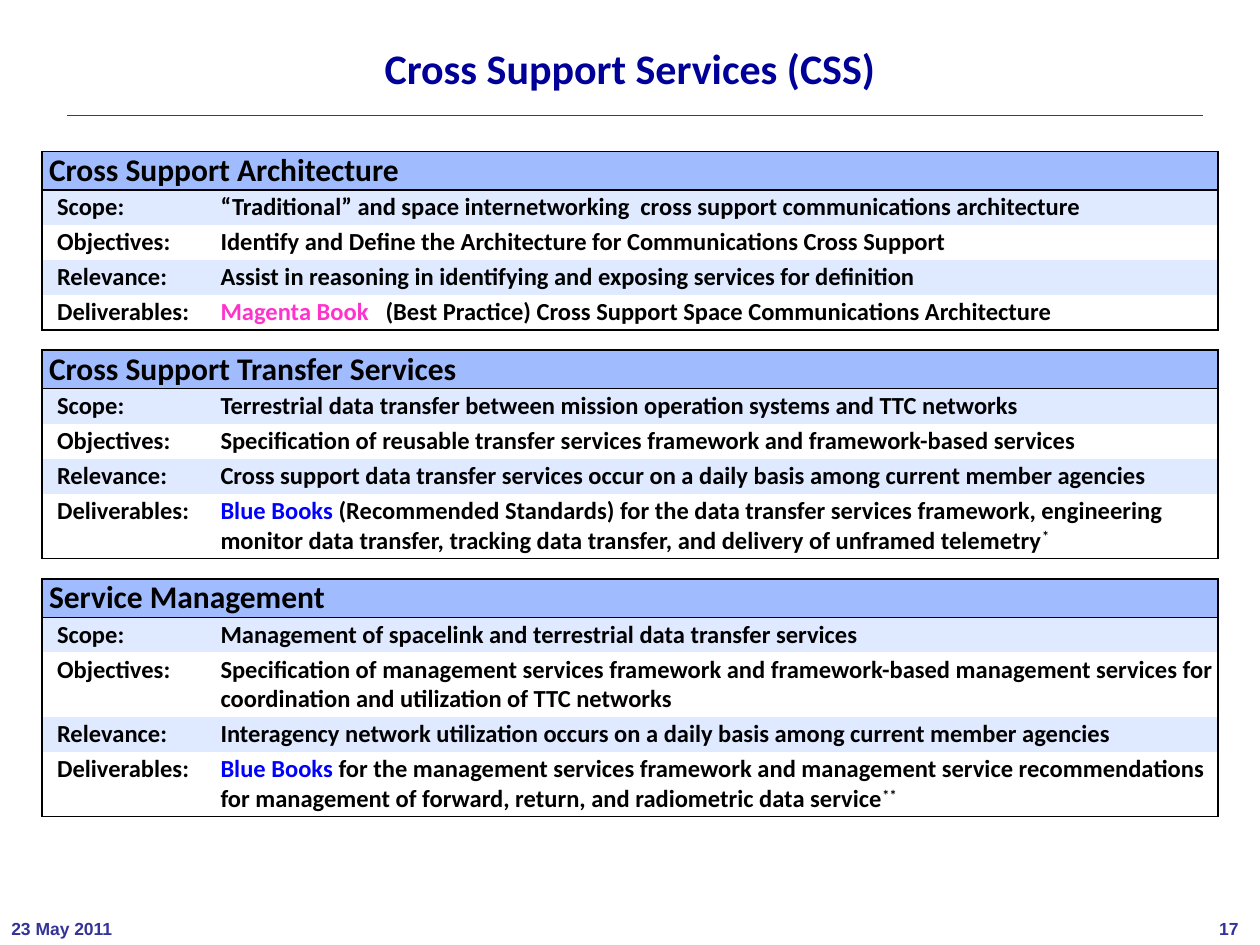
"""Build the Cross Support Services overview slide."""
from dataclasses import dataclass
from typing import Optional

from lxml.etree import SubElement
from pptx import Presentation
from pptx.dml.color import RGBColor
from pptx.enum.shapes import MSO_CONNECTOR as CONN
from pptx.enum.text import MSO_ANCHOR as ANCHOR, PP_ALIGN as ALIGN
from pptx.oxml.ns import qn
from pptx.util import Pt

BLACK = RGBColor(0x00, 0x00, 0x00)
NAVY = RGBColor(0x00, 0x00, 0x99)
INDIGO = RGBColor(0x33, 0x33, 0x99)
BLUE = RGBColor(0x00, 0x00, 0xFF)
MAGENTA = RGBColor(0xFF, 0x33, 0xCC)
HEADER_FILL = RGBColor(0xA0, 0xBC, 0xFE)
BAND_FILL = RGBColor(0xDF, 0xE9, 0xFF)

LABELS = ("Scope:", "Objectives:", "Relevance:", "Deliverables:")
COL_WIDTHS = (102, 570)
HEADER_H, LINE_H, TWO_LINE_H, SPACER_H = 22, 20, 37, 11.7


@dataclass(frozen=True)
class Span:
    text: str
    color: RGBColor = BLACK
    raised: bool = False


@dataclass(frozen=True)
class Entry:
    spans: tuple[Span, ...]
    height: float = LINE_H
    tab: Optional[float] = None


@dataclass(frozen=True)
class Area:
    title: str
    entries: tuple[Entry, ...]


@dataclass(frozen=True)
class Label:
    text: str
    box: tuple[float, float, float, float]
    size: float
    font: str
    color: RGBColor
    align: ALIGN = ALIGN.LEFT
    spacing: float = 1.0


def plain(text: str, height: float = LINE_H) -> Entry:
    return Entry((Span(text),), height)


AREAS = (
    Area("Cross Support Architecture", (
        plain("“Traditional” and space internetworking  cross support communications architecture"),
        plain("Identify and Define the Architecture for Communications Cross Support"),
        plain("Assist in reasoning in identifying and exposing services for definition"),
        Entry((Span("Magenta Book\t", MAGENTA),
               Span("(Best Practice) Cross Support Space Communications Architecture")), tab=94.3),
    )),
    Area("Cross Support Transfer Services", (
        plain("Terrestrial data transfer between mission operation systems and TTC networks"),
        plain("Specification of reusable transfer services framework and framework-based services"),
        plain("Cross support data transfer services occur on a daily basis among current member agencies"),
        Entry((Span("Blue Books ", BLUE),
               Span("(Recommended Standards) for the data transfer services framework, engineering "
                    "monitor data transfer, tracking data transfer, and delivery of unframed telemetry"),
               Span("*", raised=True)), TWO_LINE_H),
    )),
    Area("Service Management", (
        plain("Management of spacelink and terrestrial data transfer services"),
        plain("Specification of management services framework and framework-based management "
              "services for coordination and utilization of TTC networks", TWO_LINE_H),
        plain("Interagency network utilization occurs on a daily basis among current member agencies"),
        Entry((Span("Blue Books ", BLUE),
               Span("for the management services framework and management service recommendations "
                    "for management of forward, return, and radiometric data service"),
               Span("**", raised=True)), TWO_LINE_H),
    )),
)

TEXTS = (
    Label("Cross Support Services (CSS)", (36, 22.3, 648, 36), 24, "Calibri", NAVY, ALIGN.CENTER, 0.9),
    Label("23 May 2011", (6.5, 521.3, 72, 18.7), 10, "Arial", INDIGO),
    Label("17", (696.6, 521.3, 18.4, 18.7), 10, "Arial", INDIGO),
)


def add_run(p, span: Span, size: float, font: str = "Calibri") -> None:
    r = p.add_run()
    r.text = span.text
    r.font.size, r.font.name, r.font.bold = Pt(size), font, True
    r.font.color.rgb = span.color
    if span.raised:
        r.font._element.set("baseline", "30000")


def add_label(s, label: Label) -> None:
    tf = s.shapes.add_textbox(*map(Pt, label.box)).text_frame
    tf.word_wrap = True
    tf.margin_left = tf.margin_right = tf.margin_top = tf.margin_bottom = 0
    tf.vertical_anchor = ANCHOR.MIDDLE
    p = tf.paragraphs[0]
    p.alignment, p.line_spacing = label.align, label.spacing
    add_run(p, Span(label.text, label.color), label.size, label.font)


def add_rule(s) -> None:
    line = s.shapes.add_connector(CONN.STRAIGHT, Pt(38.2), Pt(66), Pt(687.6), Pt(66))
    line.line.color.rgb, line.line.width = INDIGO, Pt(0.13)
    SubElement(line._element.spPr, qn("a:effectLst"))


def style_cell(cell, sides: str, fill: Optional[RGBColor] = None,
               left: float = 0, pad: float = 0) -> None:
    cell.margin_left, cell.margin_right = Pt(left), 0
    cell.margin_top = cell.margin_bottom = Pt(pad)
    props = cell._tc.get_or_add_tcPr()
    for side in "LRTB":
        ln = SubElement(props, qn(f"a:ln{side}"), w=str(Pt(1)))
        if side in sides:
            color = SubElement(SubElement(ln, qn("a:solidFill")), qn("a:srgbClr"))
            color.set("val", str(BLACK))
        else:
            SubElement(ln, qn("a:noFill"))
    if fill is None:
        cell.fill.background()
    else:
        cell.fill.solid()
        cell.fill.fore_color.rgb = fill


def add_full_row(table, row: int, height: float, sides: str,
                 fill: Optional[RGBColor] = None, title: str = "") -> None:
    table.rows[row].height = Pt(height)
    cells = table.cell(row, 0), table.cell(row, 1)
    cells[0].merge(cells[1])
    for cell in cells:
        style_cell(cell, sides, fill, left=4)
        p = cell.text_frame.paragraphs[0]
        if title and cell is cells[0]:
            add_run(p, Span(title), 18)
        else:
            SubElement(p._p, qn("a:endParaRPr"), sz="800")


def add_entry(table, row: int, index: int, entry: Entry) -> None:
    table.rows[row].height = Pt(entry.height)
    edges = ("T" if index == 0 else "") + ("B" if index == len(LABELS) - 1 else "")
    fill = BAND_FILL if index % 2 == 0 else None
    columns = (("L", 8.6, (Span(LABELS[index]),)), ("R", 0, entry.spans))
    for col, (side, left, spans) in enumerate(columns):
        cell = table.cell(row, col)
        style_cell(cell, side + edges, fill, left, 1.4)
        p = cell.text_frame.paragraphs[0]
        if col == 1 and entry.tab:
            tabs = SubElement(p._p.get_or_add_pPr(), qn("a:tabLst"))
            SubElement(tabs, qn("a:tab"), pos=str(Pt(entry.tab)), algn="l")
        for span in spans:
            add_run(p, span, 14)


def add_areas(s) -> None:
    count = sum(len(area.entries) + 2 for area in AREAS) - 1
    table = s.shapes.add_table(count, 2, Pt(24), Pt(86.5), Pt(sum(COL_WIDTHS)), Pt(count)).table
    for column, width in zip(table.columns, COL_WIDTHS):
        column.width = Pt(width)
    row = 0
    for area in AREAS:
        if row:
            add_full_row(table, row, SPACER_H, "TB")
            row += 1
        add_full_row(table, row, HEADER_H, "LRTB", HEADER_FILL, area.title)
        for index, entry in enumerate(area.entries):
            add_entry(table, row + 1 + index, index, entry)
        row += 1 + len(area.entries)


def main() -> None:
    prs = Presentation()
    prs.slide_width, prs.slide_height = Pt(720), Pt(540)
    s = prs.slides.add_slide(prs.slide_layouts[6])
    add_rule(s)
    for label in TEXTS:
        add_label(s, label)
    add_areas(s)
    prs.save("out.pptx")


if __name__ == "__main__":
    main()
